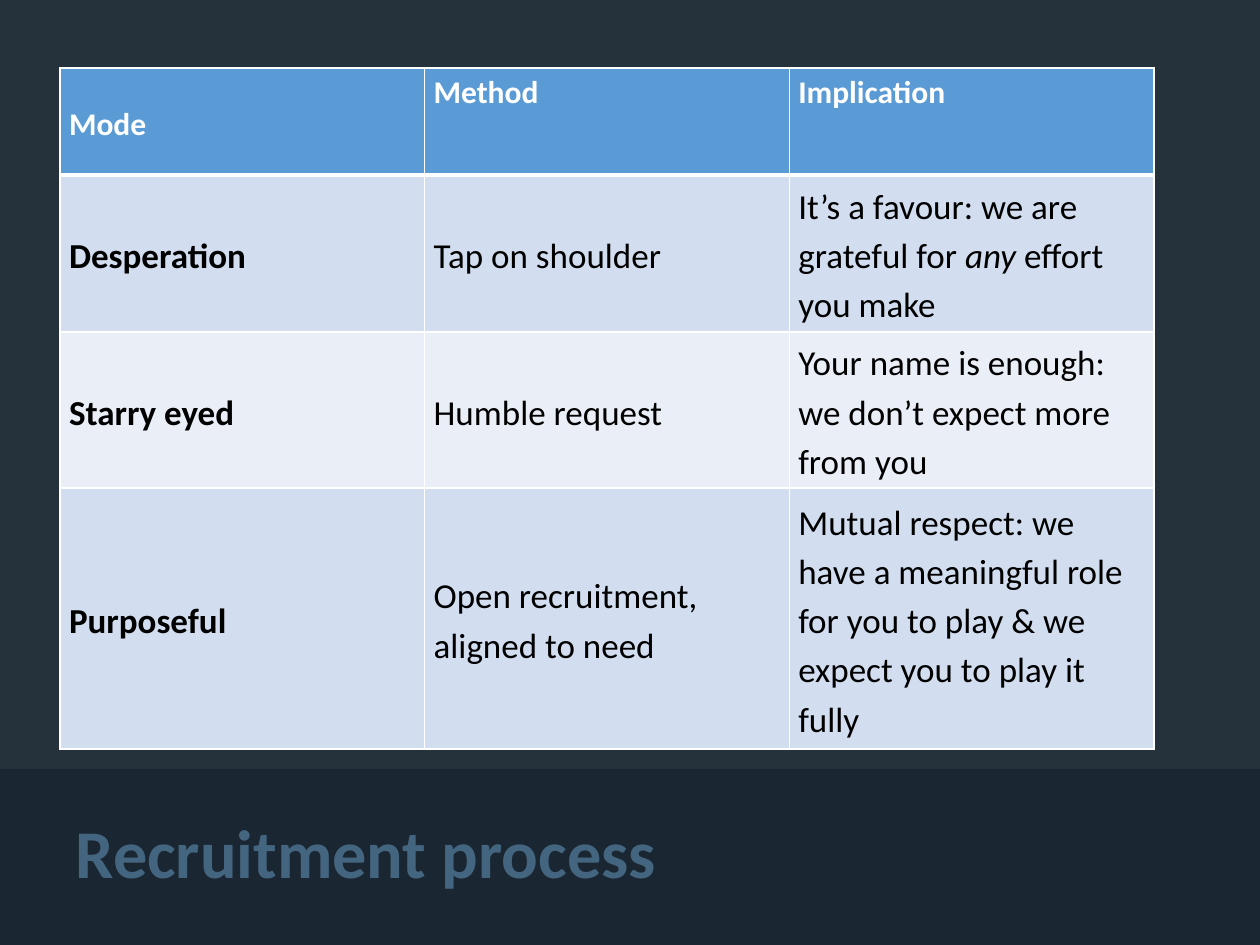
from dataclasses import dataclass

from lxml.etree import SubElement
from pptx import Presentation
from pptx.dml.color import RGBColor
from pptx.enum.shapes import MSO_SHAPE
from pptx.enum.text import MSO_ANCHOR, MSO_AUTO_SIZE, PP_ALIGN
from pptx.oxml.ns import qn
from pptx.util import Emu, Pt


@dataclass(frozen=True)
class Theme:
    font: str = "Calibri"
    background: str = "26323B"
    band: str = "1A2732"
    title: str = "446580"
    header: str = "5B9BD5"
    odd_row: str = "D2DEEF"
    even_row: str = "EAEFF7"
    light: str = "FFFFFF"
    dark: str = "000000"
    title_size: int = 39
    header_size: int = 18
    body_size: int = 20
    thin: int = 1
    thick: int = 3


THEME = Theme()
HEADINGS = ["Mode", "Method", "Implication"]
MODES = [
    ["Desperation", "Tap on shoulder", "It’s a favour: we are grateful for *any *effort you make"],
    ["Starry eyed", "Humble request", "Your name is enough: we don’t expect more from you"],
    [
        "Purposeful",
        "Open recruitment, aligned to need",
        "Mutual respect: we have a meaningful role for you to play & we expect you to play it fully",
    ],
]
ROW_HEIGHTS = [107, 157, 156, 261]


def px(length):
    return Emu(round(length * 914400 / 126))


def color(value):
    return RGBColor.from_string(value)


def set_font(paragraph, size, fill, bold):
    font = paragraph.font
    font.name = THEME.font
    font.size = Pt(size)
    font.bold = bold
    font.color.rgb = color(fill)


def set_borders(cell, top, bottom):
    properties = cell._tc.get_or_add_tcPr()
    widths = {"lnL": THEME.thin, "lnR": THEME.thin, "lnT": top, "lnB": bottom}
    for side, width in widths.items():
        line = SubElement(properties, qn(f"a:{side}"), w=str(Pt(width)))
        fill = SubElement(line, qn("a:solidFill"))
        SubElement(fill, qn("a:srgbClr"), val=THEME.light)


def fill_cell(cell, text, row, column):
    is_header = row == 0
    set_borders(
        cell,
        THEME.thick if row == 1 else THEME.thin,
        THEME.thick if is_header else THEME.thin,
    )
    row_fill = THEME.odd_row if row % 2 else THEME.even_row
    cell.fill.solid()
    cell.fill.fore_color.rgb = color(THEME.header if is_header else row_fill)
    cell.margin_left = cell.margin_right = px(9)
    cell.margin_top = cell.margin_bottom = 0
    top_aligned = is_header and column > 0
    cell.vertical_anchor = MSO_ANCHOR.TOP if top_aligned else MSO_ANCHOR.MIDDLE
    paragraph = cell.text_frame.paragraphs[0]
    paragraph.line_spacing = 1.15
    set_font(
        paragraph,
        THEME.header_size if is_header else THEME.body_size,
        THEME.light if is_header else THEME.dark,
        is_header or column == 0,
    )
    for index, part in enumerate(text.split("*")):
        run = paragraph.add_run()
        run.text = part
        if index % 2:
            run.font.italic = True


def add_mode_table(slide, left, top, width, height):
    rows = [HEADINGS, *MODES]
    frame = slide.shapes.add_table(
        len(rows), len(HEADINGS), px(left), px(top), px(width), px(height)
    )
    table = frame.table
    for column in table.columns:
        column.width = px(width / len(HEADINGS))
    for row, row_height in zip(table.rows, ROW_HEIGHTS):
        row.height = px(height * row_height / sum(ROW_HEIGHTS))
    for row, texts in enumerate(rows):
        for column, text in enumerate(texts):
            fill_cell(table.cell(row, column), text, row, column)


def add_title_band(slide, left, top, width, height):
    band = slide.shapes.add_shape(
        MSO_SHAPE.RECTANGLE, px(left), px(top), px(width), px(height)
    )
    band.shadow.inherit = False
    band.fill.solid()
    band.fill.fore_color.rgb = color(THEME.band)
    band.line.fill.background()
    title = slide.shapes.title
    title._element.addprevious(band._element)
    title.left, title.top = px(left + 63), px(top + 16)
    title.width, title.height = px(906), px(115)
    title.text = "Recruitment process"
    text_frame = title.text_frame
    text_frame.auto_size = MSO_AUTO_SIZE.NONE
    text_frame.vertical_anchor = MSO_ANCHOR.BOTTOM
    paragraph = text_frame.paragraphs[0]
    paragraph.alignment = PP_ALIGN.LEFT
    paragraph.line_spacing = 0.9
    set_font(paragraph, THEME.title_size, THEME.title, True)


def main():
    presentation = Presentation()
    presentation.slide_width, presentation.slide_height = px(1260), px(945)
    slide = presentation.slides.add_slide(presentation.slide_layouts.get_by_name("Title Only"))
    slide.background.fill.solid()
    slide.background.fill.fore_color.rgb = color(THEME.background)
    add_title_band(slide, 0, 769, 1260, 176)
    add_mode_table(slide, 60, 68, 1094, 681)
    presentation.save("out.pptx")


if __name__ == "__main__":
    main()
